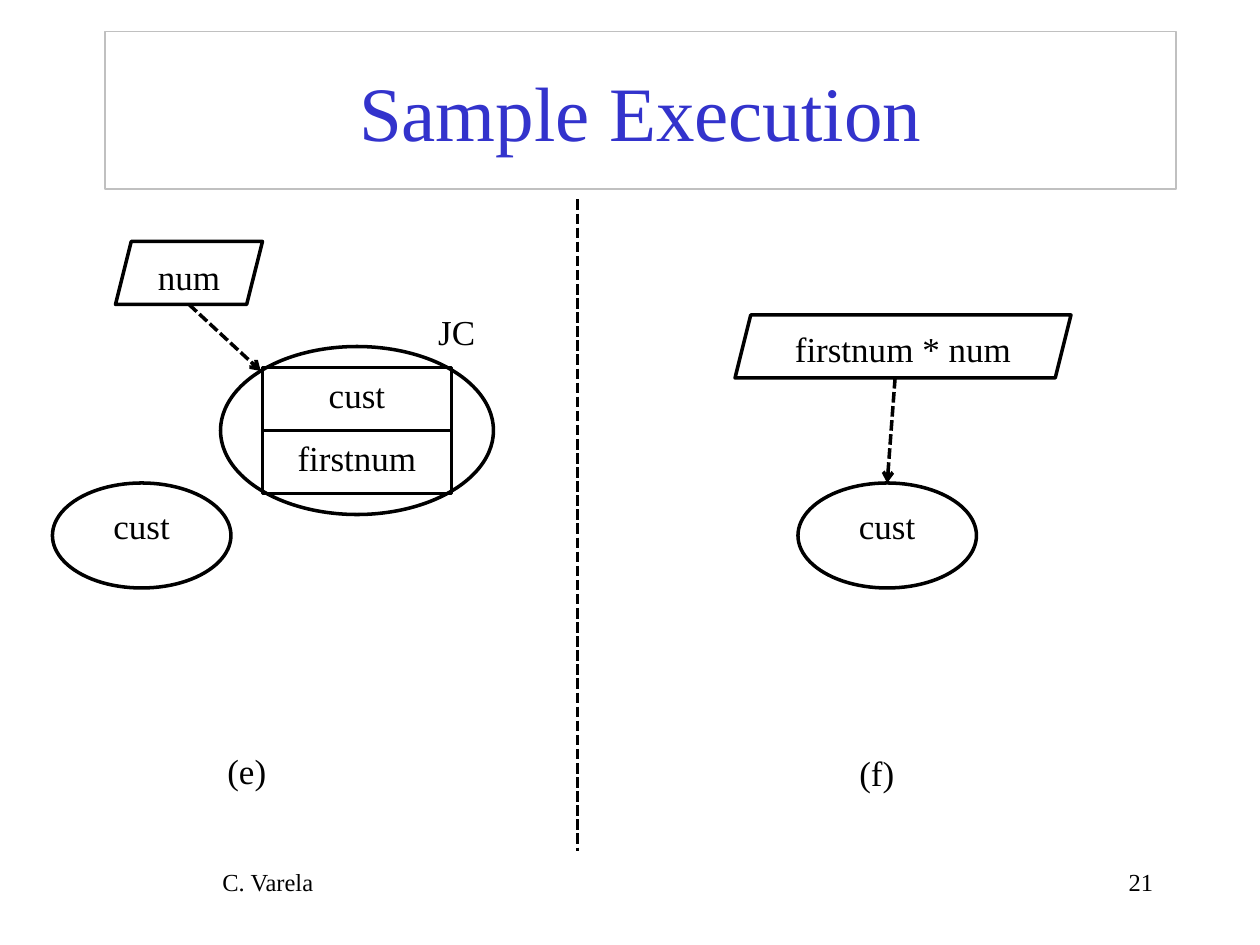
"""Build the Sample Execution slide showing two actor diagrams."""
from dataclasses import dataclass

from lxml.etree import SubElement
from pptx import Presentation
from pptx.dml.color import RGBColor
from pptx.enum.dml import MSO_LINE
from pptx.enum.shapes import MSO_CONNECTOR, MSO_SHAPE
from pptx.enum.text import MSO_ANCHOR, PP_ALIGN
from pptx.oxml.ns import qn
from pptx.util import Pt

COLORS = {"title": "3333CC", "border": "C0C0C0", "ink": "000000"}
FONT = "Times New Roman"


@dataclass
class Box:
    left: float
    top: float
    width: float
    height: float
    text: str = ""
    kind: MSO_SHAPE = MSO_SHAPE.RECTANGLE
    line: str = "ink"
    line_width: float = 2
    color: str = "ink"
    size: float = 20
    anchor: MSO_ANCHOR = MSO_ANCHOR.TOP


@dataclass
class Label:
    left: float
    top: float
    width: float
    height: float
    text: str
    size: float = 20
    align: PP_ALIGN = PP_ALIGN.CENTER


@dataclass
class DashedLine:
    start: tuple[float, float]
    end: tuple[float, float]
    arrow: bool = True


def write_text(shape, text: str, size: float, color: str, align: PP_ALIGN, anchor: MSO_ANCHOR) -> None:
    """Write one aligned run into a wrapping text frame."""
    frame = shape.text_frame
    frame.word_wrap = True
    frame.vertical_anchor = anchor
    paragraph = frame.paragraphs[0]
    paragraph.alignment = align
    run = paragraph.add_run()
    run.text = text
    run.font.name = FONT
    run.font.size = Pt(size)
    run.font.color.rgb = RGBColor.from_string(COLORS[color])


def draw_box(slide, box: Box) -> None:
    """Draw an outlined shape with optional text."""
    shape = slide.shapes.add_shape(box.kind, Pt(box.left), Pt(box.top), Pt(box.width), Pt(box.height))
    shape.shadow.inherit = False
    shape.fill.background()
    shape.line.color.rgb = RGBColor.from_string(COLORS[box.line])
    shape.line.width = Pt(box.line_width)
    if box.text:
        write_text(shape, box.text, box.size, box.color, PP_ALIGN.CENTER, box.anchor)


def draw_label(slide, label: Label) -> None:
    """Draw a plain text box."""
    shape = slide.shapes.add_textbox(Pt(label.left), Pt(label.top), Pt(label.width), Pt(label.height))
    write_text(shape, label.text, label.size, "ink", label.align, MSO_ANCHOR.TOP)


def draw_line(slide, line: DashedLine) -> None:
    """Draw a dashed line with an optional arrowhead."""
    ends = [Pt(value) for value in (*line.start, *line.end)]
    connector = slide.shapes.add_connector(MSO_CONNECTOR.STRAIGHT, *ends)
    connector.line.color.rgb = RGBColor.from_string(COLORS["ink"])
    connector.line.width = Pt(2)
    connector.line.dash_style = MSO_LINE.SQUARE_DOT
    if line.arrow:
        SubElement(connector.line._get_or_add_ln(), qn("a:tailEnd"), type="arrow")
    SubElement(connector._element.spPr, qn("a:effectLst"))


BOXES = [
    Box(60, 18, 612, 90, "Sample Execution", line="border", line_width=0.75,
        color="title", size=44, anchor=MSO_ANCHOR.MIDDLE),
    Box(66, 138, 84, 36, "num", MSO_SHAPE.PARALLELOGRAM),
    Box(126, 198, 156, 96, kind=MSO_SHAPE.OVAL),
    *(Box(150, 210 + 36 * row, 108, 36, text) for row, text in enumerate(("cust", "firstnum"))),
    Box(420, 180, 192, 36, "firstnum * num", MSO_SHAPE.PARALLELOGRAM),
    *(Box(left, 276, 102, 60, "cust", MSO_SHAPE.OVAL) for left in (30, 456)),
]
LABELS = [
    Label(120, 492, 480, 36, "C. Varela", 14, PP_ALIGN.LEFT),
    Label(516, 492, 150, 36, "21", 14, PP_ALIGN.RIGHT),
    Label(228, 174, 66, 31.5, "JC"),
    Label(114, 425, 54, 31.5, "(e)"),
    Label(474, 426, 54, 31.5, "(f)"),
]
LINES = [
    DashedLine((108, 174), (149, 212)),
    DashedLine((330, 114), (330, 486), arrow=False),
    DashedLine((511.5, 216), (507, 276)),
]


def main() -> None:
    """Build and save the presentation."""
    presentation = Presentation()
    presentation.slide_width = Pt(720)
    presentation.slide_height = Pt(540)
    slide = presentation.slides.add_slide(presentation.slide_layouts[6])
    for box in BOXES:
        draw_box(slide, box)
    for label in LABELS:
        draw_label(slide, label)
    for line in LINES:
        draw_line(slide, line)
    presentation.save("out.pptx")


if __name__ == "__main__":
    main()
